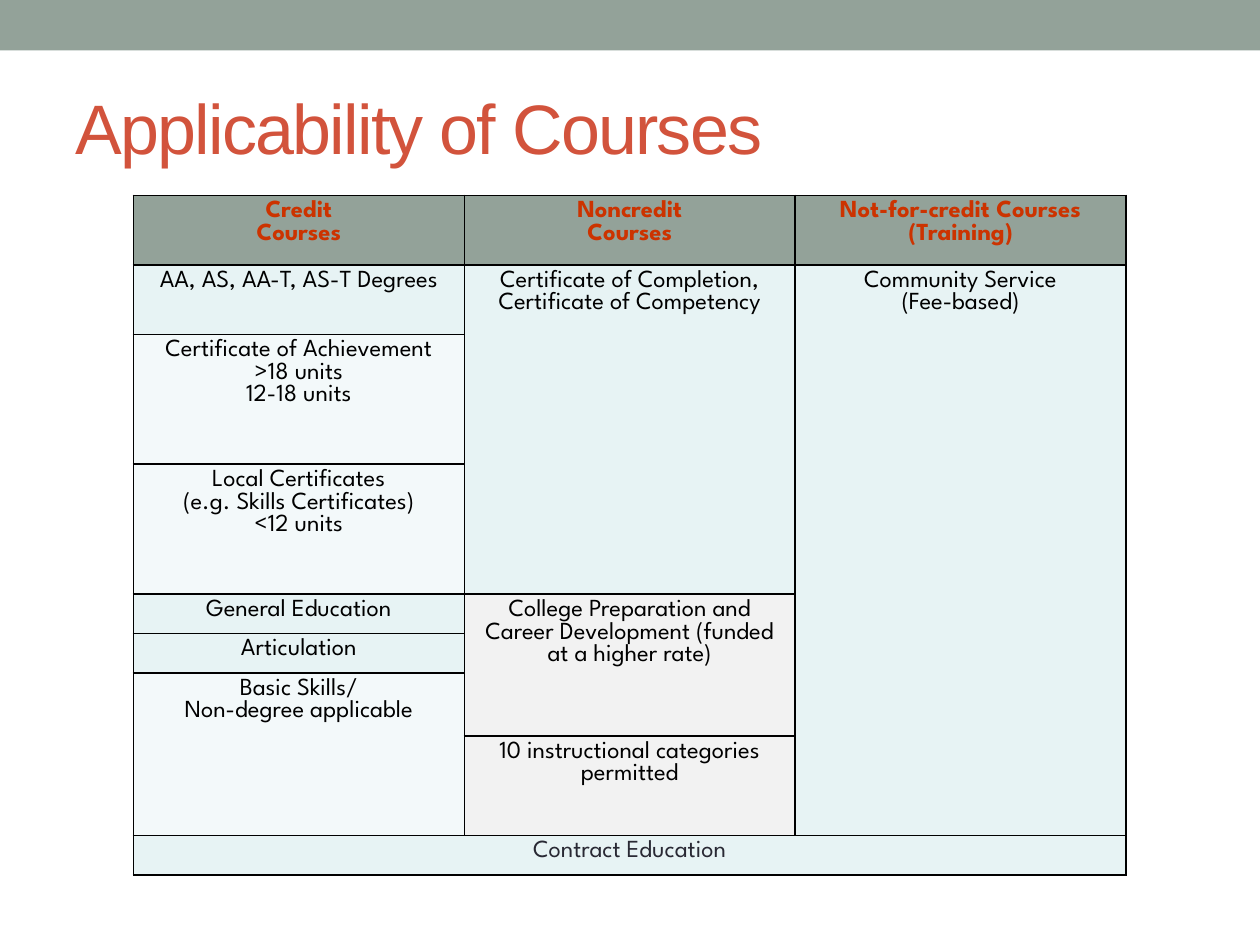
from dataclasses import dataclass
from typing import Any

from lxml import etree
from pptx import Presentation
from pptx.dml.color import RGBColor
from pptx.enum.shapes import MSO_SHAPE
from pptx.enum.text import MSO_ANCHOR, PP_ALIGN
from pptx.oxml.ns import qn
from pptx.util import Cm, Pt

RECTANGLE = MSO_SHAPE.RECTANGLE
CENTER, LEFT = PP_ALIGN.CENTER, PP_ALIGN.LEFT
MIDDLE = MSO_ANCHOR.MIDDLE

SAGE, MIST, PALE, GREY = "93A299", "E7F3F4", "F3F9FA", "F2F2F2"
COLUMN_WIDTHS = [6.67] * 3
ROW_HEIGHTS = [1.4, 1.4, 2.62, 2.62, 0.76, 0.76, 1.27, 2.01, 0.76]
HEADINGS = ["Credit\nCourses", "Noncredit\nCourses", "Not-for-credit Courses\n(Training)"]
# row, column, rows spanned, columns spanned, fill, text
COURSE_CELLS = [
    (1, 0, 1, 1, MIST, "AA, AS, AA-T, AS-T Degrees"),
    (2, 0, 1, 1, PALE, "Certificate of Achievement\n>18 units\n12-18 units"),
    (3, 0, 1, 1, PALE, "Local Certificates\n(e.g. Skills Certificates)\n<12 units"),
    (4, 0, 1, 1, MIST, "General Education"),
    (5, 0, 1, 1, MIST, "Articulation"),
    (6, 0, 2, 1, PALE, "Basic Skills/\nNon-degree applicable"),
    (1, 1, 3, 1, MIST, "Certificate of Completion,\nCertificate of Competency"),
    (4, 1, 3, 1, GREY, "College Preparation and Career Development (funded at a higher rate)"),
    (7, 1, 1, 1, GREY, "10 instructional categories permitted"),
    (1, 2, 7, 1, MIST, "Community Service\n(Fee-based)"),
]


def color(value):
    """Turn a hex string into a colour."""
    return RGBColor.from_string(value)


def write(frame, text, *, font, size, ink, bold=False, align=LEFT, spacing=None):
    """Fill a text frame with one formatted paragraph per line."""
    for index, line in enumerate(text.split("\n")):
        para = frame.paragraphs[0] if index == 0 else frame.add_paragraph()
        para.alignment = align
        span = para.add_run()
        span.text = line
        span.font.name = font
        span.font.size = Pt(size)
        span.font.bold = bold
        span.font.color.rgb = color(ink)
        if spacing is not None:
            span.font._element.set("spc", str(spacing))


def add_borders(cell, ink, width):
    """Draw a solid line on all four sides of a table cell."""
    properties = cell._tc.get_or_add_tcPr()
    for side in ("a:lnL", "a:lnR", "a:lnT", "a:lnB"):
        line = etree.SubElement(properties, qn(side), w=str(Pt(width)))
        fill = etree.SubElement(line, qn("a:solidFill"))
        etree.SubElement(fill, qn("a:srgbClr"), val=ink)


@dataclass
class Page:
    """Hold the style and the current slide."""

    slide: Any
    title_font: str = "Arial"
    table_font: str = "League Spartan"
    border: str = "000000"

    def band(self, left, top, width, height, fill):
        shape = self.slide.shapes.add_shape(RECTANGLE, Cm(left), Cm(top), Cm(width), Cm(height))
        shape.shadow.inherit = False
        shape.fill.solid()
        shape.fill.fore_color.rgb = color(fill)
        shape.line.fill.background()

    def title(self, left, top, width, height, text):
        box = self.slide.shapes.add_textbox(Cm(left), Cm(top), Cm(width), Cm(height))
        box.text_frame.word_wrap = True
        box.text_frame.vertical_anchor = MIDDLE
        write(box.text_frame, text, font=self.title_font, size=40, ink="D2533C", spacing=-100)

    def table(self, left, top, widths, heights):
        table = self.slide.shapes.add_table(
            len(heights), len(widths), Cm(left), Cm(top), Cm(sum(widths)), Cm(sum(heights))
        ).table
        table.first_row = table.horz_banding = False
        for column, width in zip(table.columns, widths):
            column.width = Cm(width)
        for row, height in zip(table.rows, heights):
            row.height = Cm(height)
        for cell in table.iter_cells():
            add_borders(cell, self.border, 1)
            cell.margin_left = cell.margin_right = Cm(0.18)
            cell.margin_top = cell.margin_bottom = Cm(0.1)
        return table

    def cell(self, table, row, column, rows, columns, fill, text, ink="000000", bold=False):
        cell = table.cell(row, column)
        if rows * columns > 1:
            cell.merge(table.cell(row + rows - 1, column + columns - 1))
        cell.fill.solid()
        cell.fill.fore_color.rgb = color(fill)
        write(cell.text_frame, text, font=self.table_font, size=14, ink=ink, bold=bold, align=CENTER)


def main():
    """Build the course applicability slide."""
    deck = Presentation()
    deck.slide_width, deck.slide_height = Cm(25.4), Cm(19.05)
    page = Page(deck.slides.add_slide(deck.slide_layouts[6]))
    page.band(0, 0, 25.4, 1.02, SAGE)
    page.title(1.27, 1.19, 22.86, 2.74, "Applicability of Courses")
    table = page.table(2.69, 3.94, COLUMN_WIDTHS, ROW_HEIGHTS)
    for column, heading in enumerate(HEADINGS):
        page.cell(table, 0, column, 1, 1, SAGE, heading, ink="CC3300", bold=True)
    for entry in COURSE_CELLS:
        page.cell(table, *entry)
    page.cell(table, 8, 0, 1, 3, MIST, "Contract Education", ink="292934")
    deck.save("out.pptx")


if __name__ == "__main__":
    main()
